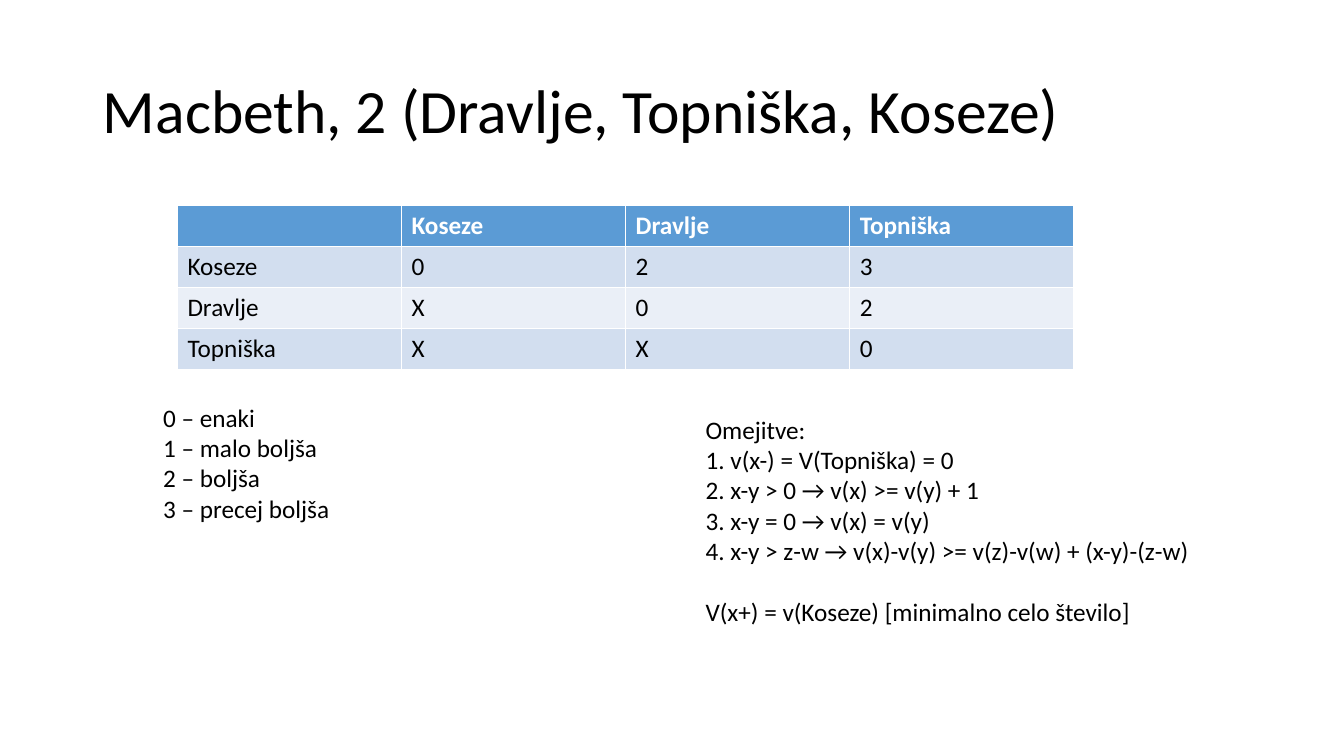
from dataclasses import dataclass

from pptx import Presentation
from pptx.dml.color import RGBColor
from pptx.enum import text
from pptx.util import Inches, Pt

TITLE = "Macbeth, 2 (Dravlje, Topniška, Koseze)"
COMPARISONS = [
    ("", "Koseze", "Dravlje", "Topniška"),
    ("Koseze", "0", "2", "3"),
    ("Dravlje", "X", "0", "2"),
    ("Topniška", "X", "X", "0"),
]
SCALE = ["0 – enaki", "1 – malo boljša", "2 – boljša", "3 – precej boljša"]
CONSTRAINTS = [
    "Omejitve:",
    "1. v(x-) = V(Topniška) = 0",
    "2. x-y > 0 → v(x) >= v(y) + 1",
    "3. x-y = 0 → v(x) = v(y)",
    "4. x-y > z-w → v(x)-v(y) >= v(z)-v(w) + (x-y)-(z-w)",
    "V(x+) = v(Koseze) [minimalno celo število]",
]


@dataclass(frozen=True)
class Theme:
    font: str = "Calibri"
    title_size: int = 44
    body_size: int = 18
    line_gap: int = 22
    ink: str = "000000"
    header_ink: str = "FFFFFF"
    header_fill: str = "5B9BD5"
    band_fills: tuple = ("D2DEEF", "EAEFF7")


THEME = Theme()


def style(para, size=THEME.body_size, color=THEME.ink, bold=False):
    para.font.name = THEME.font
    para.font.size = Pt(size)
    para.font.color.rgb = RGBColor.from_string(color)
    para.font.bold = bold


def add_title(page):
    title = page.shapes.title
    title.left, title.top = Inches(0.92), Inches(0.4)
    title.width, title.height = Inches(11.5), Inches(1.45)
    frame = title.text_frame
    frame.text = TITLE
    frame.auto_size = text.MSO_AUTO_SIZE.NONE
    frame.vertical_anchor = text.MSO_ANCHOR.MIDDLE
    para = frame.paragraphs[0]
    para.alignment = text.PP_ALIGN.LEFT
    para.line_spacing = 0.9
    style(para, THEME.title_size)


def add_comparisons(page):
    table = page.shapes.add_table(
        len(COMPARISONS), len(COMPARISONS[0]),
        Inches(1.76), Inches(2.04), Inches(8.89), Inches(1.62),
    ).table
    for row, values in enumerate(COMPARISONS):
        header = row == 0
        fill = THEME.header_fill if header else THEME.band_fills[(row - 1) % 2]
        ink = THEME.header_ink if header else THEME.ink
        for column, value in enumerate(values):
            cell = table.cell(row, column)
            cell.text = value
            cell.fill.solid()
            cell.fill.fore_color.rgb = RGBColor.from_string(fill)
            style(cell.text_frame.paragraphs[0], color=ink, bold=header)


def add_lines(page, lines, left, top, width, height, level=0, wrap=True):
    box = page.shapes.add_textbox(*map(Inches, (left, top, width, height)))
    frame = box.text_frame
    frame.word_wrap = wrap
    frame.text = "\n".join(lines)
    for para in frame.paragraphs:
        para.level = level
        style(para)
    return frame


def main():
    deck = Presentation()
    deck.slide_width, deck.slide_height = Inches(13.33), Inches(7.5)
    page = deck.slides.add_slide(deck.slide_layouts.get_by_name("Title Only"))
    add_title(page)
    add_comparisons(page)
    add_lines(page, SCALE, 1.02, 3.94, 6.67, 1.92, level=1)
    constraints = add_lines(page, CONSTRAINTS, 6.9, 4.06, 5.1, 2.22, wrap=False)
    constraints.paragraphs[-1].space_before = Pt(THEME.line_gap)
    deck.save("out.pptx")


if __name__ == "__main__":
    main()
